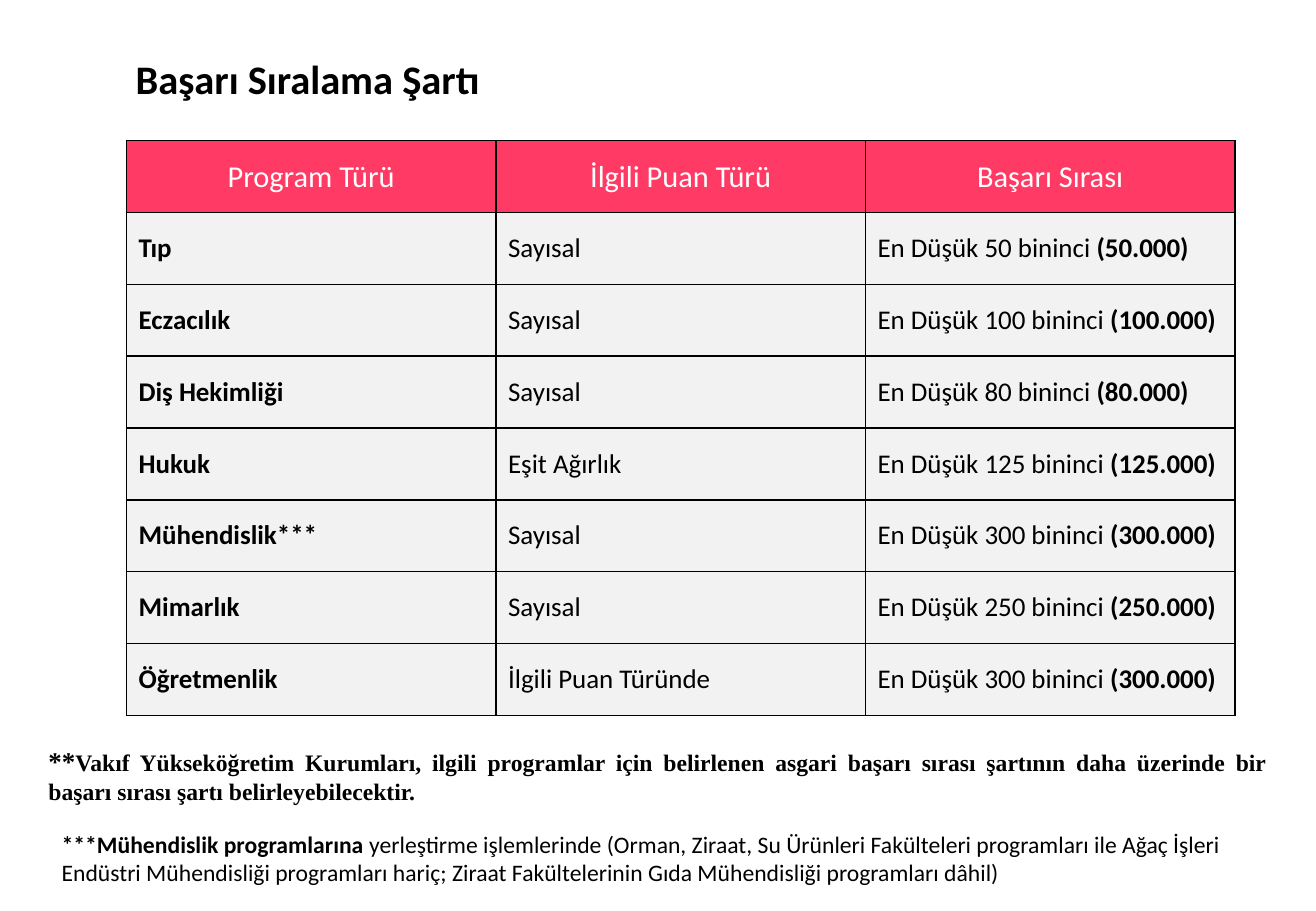
from lxml.etree import SubElement
from pptx import Presentation
from pptx.dml.color import RGBColor
from pptx.enum.text import MSO_ANCHOR as Anchor, MSO_AUTO_SIZE as AutoSize, PP_ALIGN as Align
from pptx.oxml.ns import qn
from pptx.util import Pt

PX = 7620  # EMU per px, 120 px to the inch
BLACK, WHITE, PINK, GREY = "000000", "FFFFFF", "FF3A65", "F2F2F2"


def color(value):
    return RGBColor.from_string(value)


def write(para, spans, align=Align.LEFT, ink=BLACK, name="Calibri"):
    para.alignment = align
    for text, size, bold in spans:
        span = para.add_run()
        span.text = text
        for key, value in {"name": name, "size": Pt(size), "bold": bold}.items():
            setattr(span.font, key, value)
        span.font.color.rgb = color(ink)


deck = Presentation()
deck.slide_width, deck.slide_height = 1300 * PX, 900 * PX
page = deck.slides.add_slide(deck.slide_layouts[5])

# Title
title = page.shapes.title
for key, value in {"left": 102, "top": 47, "width": 404, "height": 60}.items():
    setattr(title, key, value * PX)
for key, value in {"word_wrap": True, "auto_size": AutoSize.NONE,
                   "vertical_anchor": Anchor.TOP}.items():
    setattr(title.text_frame, key, value)
write(title.text_frame.paragraphs[0], [("Başarı Sıralama Şartı", 24, True)], Align.CENTER)

# Table of programs
headings = ["Program Türü", "İlgili Puan Türü", "Başarı Sırası"]
programs = [
    ("Tıp", "Sayısal", 50),
    ("Eczacılık", "Sayısal", 100),
    ("Diş Hekimliği", "Sayısal", 80),
    ("Hukuk", "Eşit Ağırlık", 125),
    ("Mühendislik***", "Sayısal", 300),
    ("Mimarlık", "Sayısal", 250),
    ("Öğretmenlik", "İlgili Puan Türünde", 300),
]
rows = [[[(heading, 18, False)] for heading in headings]]
for program, score, rank in programs:
    rows.append([
        [(program, 16, True)],
        [(score, 16, False)],
        [(f"En Düşük {rank} bininci ", 16, False), (f"({rank}.000)", 16, True)],
    ])

COLUMN, ROW = 365, 71
table = page.shapes.add_table(len(rows), len(headings), 125 * PX, 139 * PX,
                              len(headings) * COLUMN * PX, len(rows) * ROW * PX).table
for column in table.columns:
    column.width = COLUMN * PX
for r, row in enumerate(rows):
    table.rows[r].height = ROW * PX
    for c, spans in enumerate(row):
        cell = table.cell(r, c)
        cell.vertical_anchor = Anchor.MIDDLE
        # Black border on all four sides
        for side in ("a:lnL", "a:lnR", "a:lnT", "a:lnB"):
            line = SubElement(cell._tc.get_or_add_tcPr(), qn(side), w=str(Pt(1)))
            SubElement(SubElement(line, qn("a:solidFill")), qn("a:srgbClr"), val=BLACK)
        cell.fill.solid()
        cell.fill.fore_color.rgb = color(GREY if r else PINK)
        write(cell.text_frame.paragraphs[0], spans,
              Align.LEFT if r else Align.CENTER, BLACK if r else WHITE)

# Footnotes
notes = [
    ((36, 730, 1228, 73), Align.JUSTIFY, "Times New Roman", [
        ("**", 16, True),
        ("Vakıf Yükseköğretim Kurumları, ilgili programlar için belirlenen asgari başarı sırası "
         "şartının daha üzerinde bir başarı sırası şartı belirleyebilecektir.", 14, True)]),
    ((49, 814, 1247, 68), Align.LEFT, "Calibri", [
        ("***Mühendislik programlarına ", 14, True),
        ("yerleştirme işlemlerinde (Orman, Ziraat, Su Ürünleri Fakülteleri programları ile Ağaç "
         "İşleri Endüstri Mühendisliği programları hariç; Ziraat Fakültelerinin Gıda Mühendisliği "
         "programları dâhil)", 14, False)]),
]
for place, align, name, spans in notes:
    box = page.shapes.add_textbox(*[length * PX for length in place])
    box.text_frame.word_wrap = True
    write(box.text_frame.paragraphs[0], spans, align, name=name)

deck.save("out.pptx")
